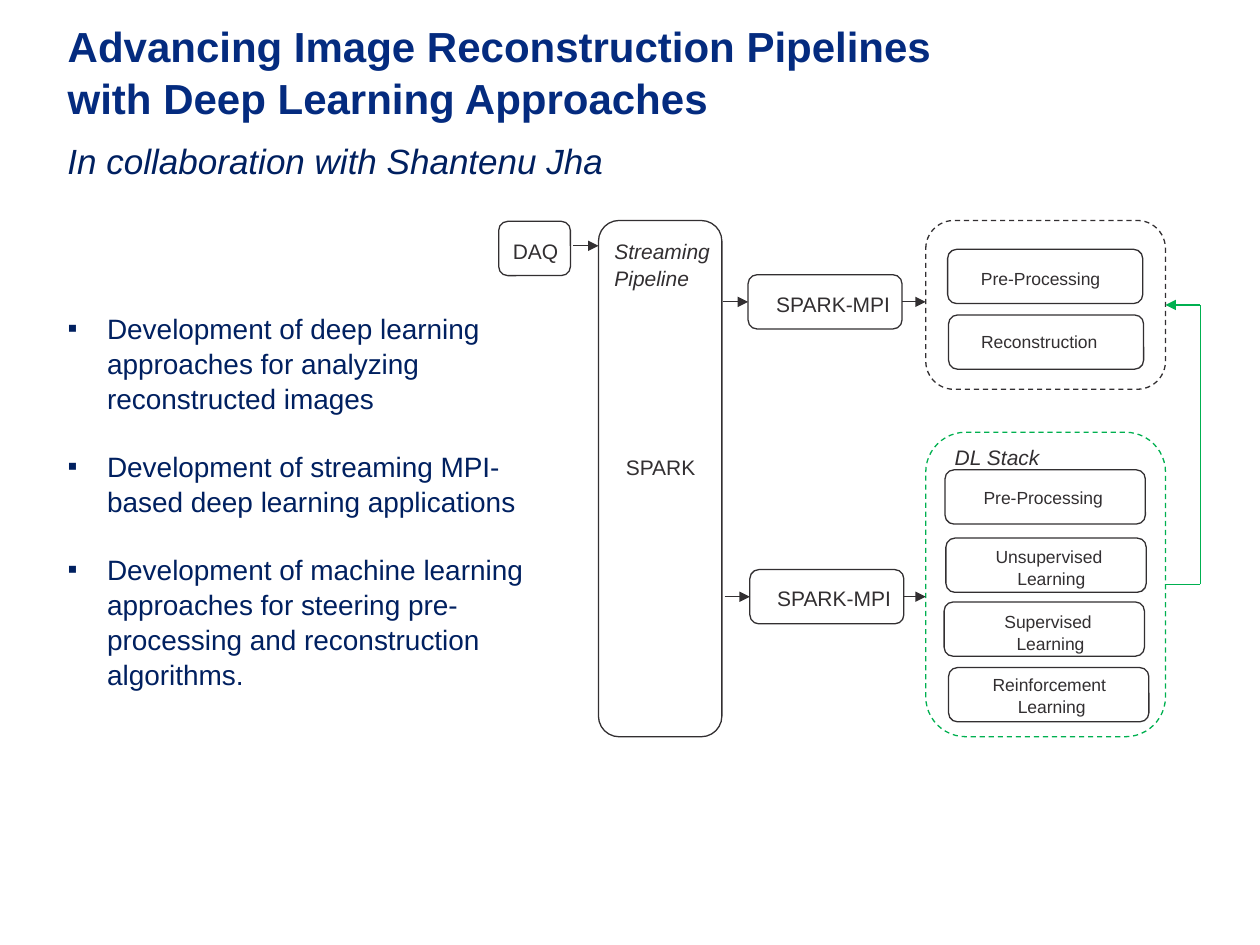
"""Build the slide on image reconstruction pipelines with deep learning."""
from lxml.etree import SubElement
from pptx import Presentation
from pptx.dml.color import RGBColor
from pptx.enum.dml import MSO_LINE
from pptx.enum.shapes import MSO_CONNECTOR, MSO_SHAPE
from pptx.enum.text import MSO_ANCHOR, MSO_AUTO_SIZE, PP_ALIGN
from pptx.oxml.ns import qn
from pptx.util import Pt

INK = RGBColor(0x32, 0x2F, 0x31)
GREEN = RGBColor(0x00, 0xB0, 0x50)
BLUE = RGBColor(0x04, 0x2B, 0x7F)
NAVY = RGBColor(0x00, 0x20, 0x60)

deck = Presentation()
deck.slide_width, deck.slide_height = Pt(720), Pt(540)
slide = deck.slides.add_slide(deck.slide_layouts[1])
shapes = slide.shapes


def write(shape, place, lines, size, color=INK, bold=False, italic=False,
          align=PP_ALIGN.LEFT, wrap=False, bullet=None):
    shape.left, shape.top, shape.width, shape.height = map(Pt, place)
    frame = shape.text_frame
    frame.word_wrap = wrap
    frame.auto_size = MSO_AUTO_SIZE.NONE
    frame.vertical_anchor = MSO_ANCHOR.TOP
    for i, line in enumerate(lines):
        para = frame.add_paragraph() if i else frame.paragraphs[0]
        para.alignment = align
        para.line_spacing = 1.04
        para.space_before = Pt(19 if bullet and i else 0)
        if bullet:
            props = para._p.get_or_add_pPr()
            props.set("marL", str(Pt(22.5)))
            props.set("indent", str(-Pt(22.5)))
            SubElement(props, qn("a:buFont"), typeface="Arial")
            SubElement(props, qn("a:buChar"), char=bullet)
        run = para.add_run()
        run.text = line
        font = run.font
        font.name, font.size = "Arial", Pt(size)
        font.bold, font.italic = bold, italic
        font.color.rgb = color


def link(start, end, color=INK, arrow=True, source=None, target=None):
    line = shapes.add_connector(MSO_CONNECTOR.STRAIGHT, *map(Pt, start + end))
    if source:
        line.begin_connect(*source)
    if target:
        line.end_connect(*target)
    line.line.color.rgb = color
    line.line.width = Pt(0.75)
    if arrow:
        SubElement(line.line._get_or_add_ln(), qn("a:tailEnd"), type="triangle")
    SubElement(line._element.spPr, qn("a:effectLst"))


write(shapes.title, (31.5, 7, 551, 65.5),
      ["Advancing Image Reconstruction Pipelines with Deep Learning Approaches"],
      24, BLUE, bold=True, wrap=True)
write(shapes.add_textbox(0, 0, 0, 0), (31.5, 75, 329, 31.5),
      ["In collaboration with Shantenu Jha"], 20, NAVY, italic=True)
write(slide.placeholders[1], (31.5, 173.5, 304.5, 220), [
    "Development of deep learning approaches for analyzing reconstructed images",
    "Development of streaming MPI-based deep learning applications",
    "Development of machine learning approaches for steering pre-processing "
    "and reconstruction algorithms.",
], 16, NAVY, wrap=True, bullet="▪")

frames = {
    "pipe": (342, 126, 70.5, 295),
    "daq": (285, 126.5, 41, 31),
    "recon": (529, 126, 137, 96.5),
    "stack": (529, 247, 137, 174),
    "top mpi": (427.5, 157, 88, 31),
    "low mpi": (428.5, 325.5, 88, 31),
    "prep": (541.5, 142.5, 111.5, 31),
    "rebuild": (542, 180, 111.5, 31),
    "dl prep": (540, 268.5, 114.5, 31),
    "unsup": (540.5, 307.5, 114.5, 31),
    "sup": (539.5, 344, 114.5, 31),
    "reinf": (542, 381.5, 114.5, 31),
}
boxes = {}
for name, place in frames.items():
    box = shapes.add_shape(MSO_SHAPE.ROUNDED_RECTANGLE, *map(Pt, place))
    box.shadow.inherit = False
    box.fill.background()
    box.line.color.rgb = GREEN if name == "stack" else INK
    box.line.width = Pt(0.75)
    if name in ("recon", "stack"):
        box.line.dash_style = MSO_LINE.DASH
    boxes[name] = box

for left, top, width, text in [
    (286, 132, 41, "DAQ"),
    (350.5, 255.5, 54.5, "SPARK"),
    (436.5, 162.5, 80.5, "SPARK-MPI"),
    (437, 330.5, 80.5, "SPARK-MPI"),
]:
    write(shapes.add_textbox(0, 0, 0, 0), (left, top, width, 21.5), [text], 12)

write(shapes.add_textbox(0, 0, 0, 0), (344, 132.5, 69, 36),
      ["Streaming Pipeline"], 12, italic=True, wrap=True)
write(shapes.add_textbox(0, 0, 0, 0), (538.5, 250, 67, 21.5),
      ["DL Stack"], 12, italic=True)

for left, top, width, text in [
    (553.5, 149, 83.5, "Pre-Processing"),
    (553.5, 185, 81.5, "Reconstruction"),
    (555, 274.5, 83.5, "Pre-Processing"),
]:
    write(shapes.add_textbox(0, 0, 0, 0), (left, top, width, 19.5), [text], 10)

for left, top, width, kind in [
    (561.5, 308, 78.5, "Unsupervised "),
    (566.5, 345, 67.5, "Supervised "),
    (559.5, 381, 83, "Reinforcement "),
]:
    write(shapes.add_textbox(0, 0, 0, 0), (left, top, width, 31.5),
          [kind, "Learning"], 10, align=PP_ALIGN.CENTER)

link((327.5, 140.5), (342, 140.5))
for name in ("top mpi", "low mpi"):
    left, top, width, height = frames[name]
    mid = top + height / 2
    link((left - 14.5, mid), (left, mid), target=(boxes[name], 1))
    link((left + width, mid), (529, mid), source=(boxes[name], 3))

link((666, 334), (686, 334), GREEN, arrow=False, source=(boxes["stack"], 3))
link((686, 334), (686, 174.25), GREEN, arrow=False)
link((686, 174.25), (666, 174.25), GREEN, target=(boxes["recon"], 3))

deck.save("out.pptx")
